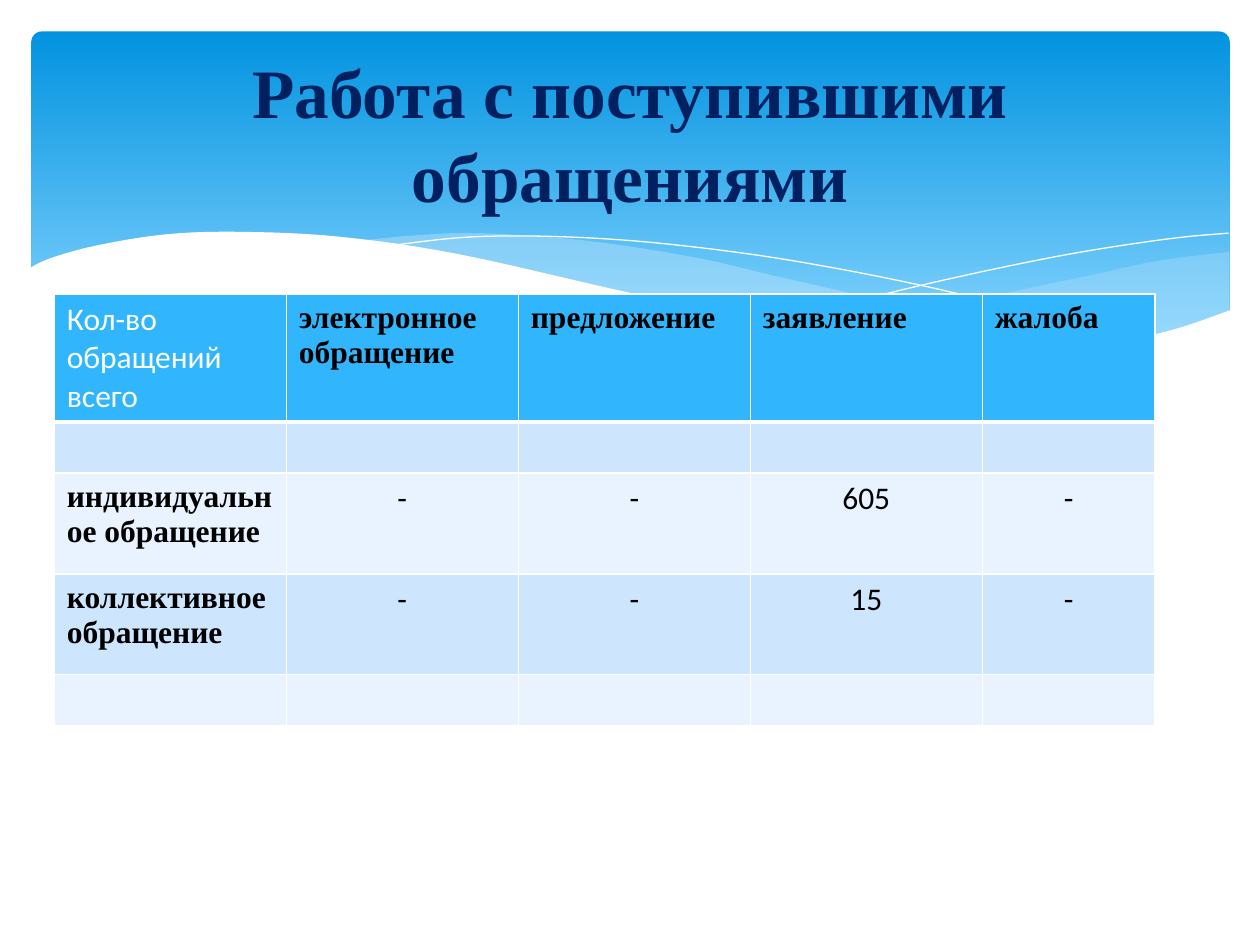
from lxml.etree import SubElement
from pptx import Presentation
from pptx.dml.color import RGBColor
from pptx.enum.shapes import MSO_SHAPE
from pptx.enum.text import MSO_ANCHOR, PP_ALIGN
from pptx.oxml.ns import qn
from pptx.util import Pt

TITLE = "Работа с поступившими обращениями"
HEADER = ["Кол-во обращений всего", "электронное обращение", "предложение", "заявление", "жалоба"]
ROWS = [
    HEADER,
    [""] * 5,
    ["индивидуальное обращение", "-", "-", "605", "-"],
    ["коллективное обращение", "-", "-", "15", "-"],
    [""] * 5,
]
COLUMN_WIDTHS = [132.6, 132.6, 132.6, 132.6, 98.8]
ROW_HEIGHTS = [73, 29.2, 57.6, 57.6, 29.2]
HEADER_FILL, BAND_FILLS = "31B6FD", ["E8F3FF", "CEE5FE"]

# Each wave is a list of edges; every edge is a smooth curve through its points.
RIGHT_WAVE = [
    [(702.4, 144), (662, 149), (620, 158), (560.5, 170.6), (476, 190.8)],
    [(476, 190.8), (527, 197), (578, 200), (628, 197.5), (673, 188), (702.4, 177.8)],
]
MIDDLE_WAVE = [
    [(643, 196.6), (558, 183), (453, 160), (399.6, 147.6), (335, 137.5), (273.6, 133.2),
     (236, 134.6), (206, 137.5)],
    [(206, 137.5), (261, 146), (323, 159.8), (407.5, 178.6), (479, 191.5), (547, 199),
     (603, 200), (643, 196.6)],
]
WHITE_WAVE = [
    [(703.4, 177.1), (669.6, 188.6), (630, 196.6), (582.5, 199.4), (522.7, 195.8),
     (450.7, 185.8), (362, 167.8), (262.8, 145.4), (195, 135.4), (139, 132.5),
     (95, 133.9), (54.7, 140.4), (28.8, 147.6), (16.6, 153.4)],
    [(16.6, 236.9), (703.4, 236.9)],
]
THIN_LINES = [
    [(222.5, 140.4), (269, 135.4), (324, 135.4), (383.8, 139.7), (457.9, 149.8),
     (547.2, 167.8), (653, 195.8)],
    [(441.4, 185), (518.4, 164.9), (601.9, 146.9), (665.3, 136.8), (702, 133.2)],
]


def color(hex_code):
    return RGBColor.from_string(hex_code)


def smooth(points, steps=6):
    """Catmull-Rom curve through the given points."""
    padded = [points[0], *points, points[-1]]
    curve = [points[0]]
    for a, b, c, d in zip(padded, padded[1:], padded[2:], padded[3:]):
        for step in range(1, steps + 1):
            t = step / steps
            curve.append(tuple(
                (2 * q + (r - p) * t + (2 * p - 5 * q + 4 * r - s) * t ** 2
                 + (3 * q - p - 3 * r + s) * t ** 3) / 2
                for p, q, r, s in zip(a, b, c, d)))
    return curve


def add_curve(slide, edges, fill=None, opacity=100):
    points = [(Pt(x), Pt(y)) for edge in edges for x, y in smooth(edge)]
    builder = slide.shapes.build_freeform(*points[0], scale=1.0)
    builder.add_line_segments(points[1:], close=fill is not None)
    shape = builder.convert_to_shape()
    shape.shadow.inherit = False
    if fill is None:
        shape.fill.background()
        shape.line.color.rgb = color("FFFFFF")
        shape.line.width = Pt(0)
        return
    shape.line.fill.background()
    shape.fill.solid()
    shape.fill.fore_color.rgb = color(fill)
    if opacity < 100:
        solid = shape.fill.fore_color._xFill
        SubElement(solid[0], qn("a:alpha"), val=str(opacity * 1000))


def add_banner(slide):
    banner = slide.shapes.add_shape(
        MSO_SHAPE.ROUNDED_RECTANGLE, Pt(18), Pt(18), Pt(684.6), Pt(194.4))
    banner.adjustments[0] = 0.03
    banner.shadow.inherit = False
    banner.line.fill.background()
    banner.fill.gradient()
    banner.fill.gradient_angle = 270
    stops = banner.fill.gradient_stops
    for stop, position, code in zip(stops, (0, 0.9), ("0293E0", "83D3FE")):
        stop.position = position
        stop.color.rgb = color(code)


def set_borders(cell, bottom):
    properties = cell._tc.get_or_add_tcPr()
    for index, (side, width) in enumerate(
            [("lnL", 1), ("lnR", 1), ("lnT", 1), ("lnB", bottom)]):
        line = properties.makeelement(qn(f"a:{side}"), {"w": str(Pt(width))})
        properties.insert(index, line)
        solid = SubElement(line, qn("a:solidFill"))
        SubElement(solid, qn("a:srgbClr"), val="FFFFFF")


def add_requests_table(slide):
    frame = slide.shapes.add_table(
        len(ROWS), len(HEADER), Pt(31), Pt(168),
        Pt(sum(COLUMN_WIDTHS)), Pt(sum(ROW_HEIGHTS)))
    table = frame.table
    for column, width in zip(table.columns, COLUMN_WIDTHS):
        column.width = Pt(width)
    for r, (row, height) in enumerate(zip(ROWS, ROW_HEIGHTS)):
        table.rows[r].height = Pt(height)
        for c, text in enumerate(row):
            cell = table.cell(r, c)
            cell.text = text
            cell.fill.solid()
            cell.fill.fore_color.rgb = color(BAND_FILLS[r % 2] if r else HEADER_FILL)
            set_borders(cell, bottom=1 if r else 3)
            is_label = bool(text) and (r == 0) != (c == 0)
            paragraph = cell.text_frame.paragraphs[0]
            paragraph.alignment = PP_ALIGN.CENTER if r and c else PP_ALIGN.LEFT
            font = paragraph.font
            font.size = Pt(18)
            font.name = "Times New Roman" if is_label else "Calibri"
            font.bold = is_label
            font.color.rgb = color("000000" if r or c else "FFFFFF")


def main():
    presentation = Presentation()
    presentation.slide_width, presentation.slide_height = Pt(720), Pt(540)
    slide = presentation.slides.add_slide(presentation.slide_layouts[5])

    # Banner with waves
    add_banner(slide)
    add_curve(slide, RIGHT_WAVE, "C6E7FC", 29)
    add_curve(slide, MIDDLE_WAVE, "C6E7FC", 40)
    for line in THIN_LINES:
        add_curve(slide, [line])
    add_curve(slide, WHITE_WAVE, "FFFFFF")

    # Title, brought in front of the banner
    title = slide.shapes.title
    title._element.getparent().append(title._element)
    title.left, title.top, title.width, title.height = Pt(36), Pt(26.6), Pt(648), Pt(98.6)
    title.text_frame.text = TITLE
    title.text_frame.vertical_anchor = MSO_ANCHOR.MIDDLE
    paragraph = title.text_frame.paragraphs[0]
    paragraph.alignment = PP_ALIGN.CENTER
    paragraph.font.name = "Times New Roman"
    paragraph.font.size = Pt(39.6)
    paragraph.font.bold = True
    paragraph.font.color.rgb = color("002060")

    add_requests_table(slide)
    presentation.save("out.pptx")


if __name__ == "__main__":
    main()
